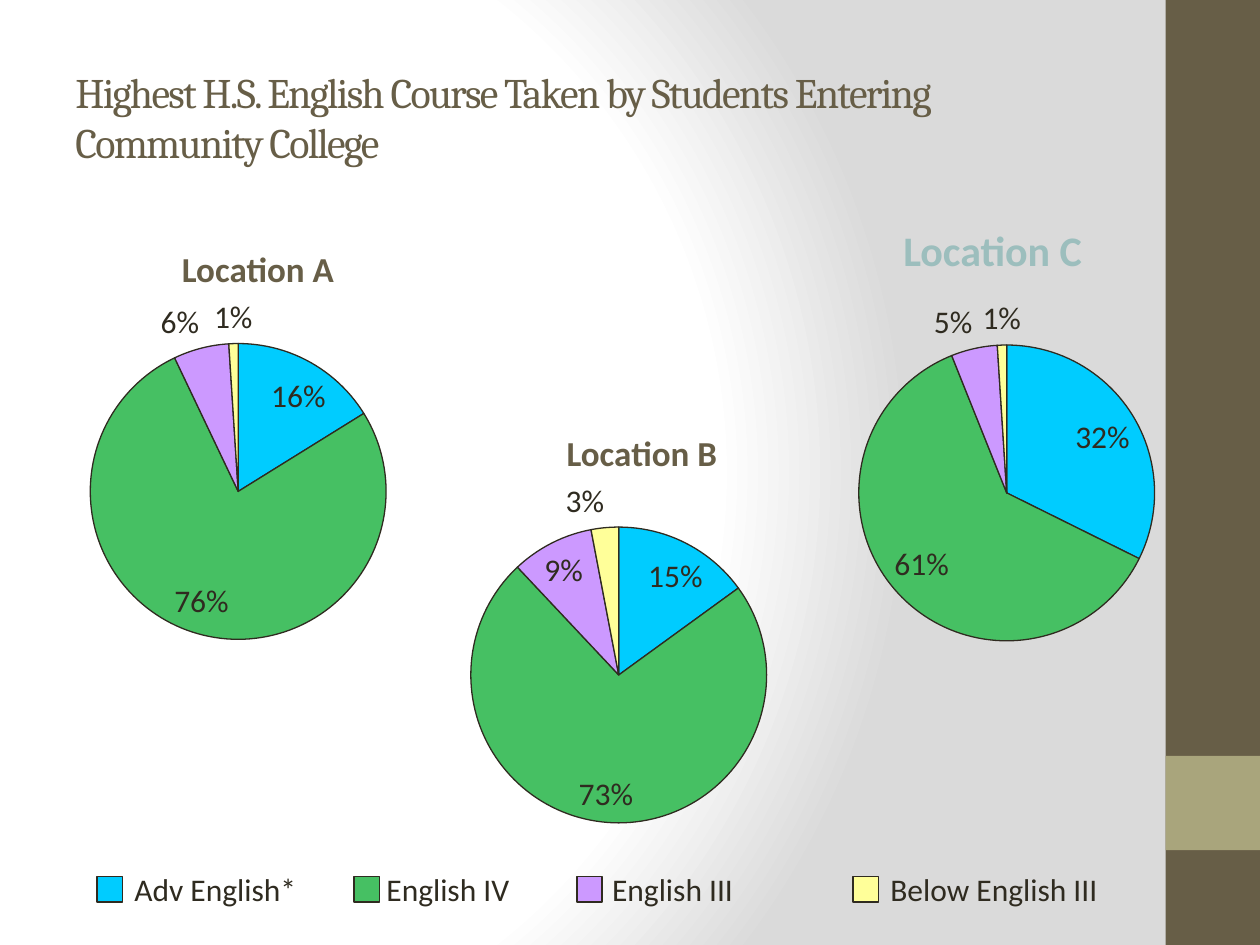
from lxml import etree
from pptx import Presentation
from pptx.chart.data import CategoryChartData
from pptx.dml.color import RGBColor
from pptx.enum.chart import XL_CHART_TYPE, XL_LABEL_POSITION
from pptx.enum.shapes import MSO_SHAPE
from pptx.enum.text import MSO_ANCHOR, PP_ALIGN
from pptx.oxml import parse_xml
from pptx.oxml.ns import nsdecls, qn
from pptx.util import Cm, Pt

INK = RGBColor(0x2F, 0x2B, 0x20)
BROWN = RGBColor(0x67, 0x5E, 0x47)
OLIVE = RGBColor(0xA9, 0xA5, 0x7C)
TEAL = RGBColor(0x9C, 0xBE, 0xBD)
BLUE = RGBColor(0x00, 0xCC, 0xFF)
GREEN = RGBColor(0x46, 0xC0, 0x63)
MAUVE = RGBColor(0xCC, 0x99, 0xFF)
CREAM = RGBColor(0xFF, 0xFF, 0x99)
HUES = [BLUE, GREEN, MAUVE, CREAM]

deck = Presentation()
deck.slide_width, deck.slide_height = Cm(25.4), Cm(19.05)
slide = deck.slides.add_slide(deck.slide_layouts[6])


def add_text(text, x, y, w, h, size, color, anchor, face="Calibri", bold=False):
    box = slide.shapes.add_textbox(Cm(x), Cm(y), Cm(w), Cm(h))
    frame = box.text_frame
    frame.word_wrap = True
    frame.vertical_anchor = anchor
    para = frame.paragraphs[0]
    para.text = text
    para.font.name, para.font.size = face, Pt(size)
    para.font.bold = bold
    para.font.color.rgb = color
    return frame


def add_rect(x, y, w, h, color, line=None):
    rect = slide.shapes.add_shape(MSO_SHAPE.RECTANGLE, Cm(x), Cm(y), Cm(w), Cm(h))
    rect.shadow.inherit = False
    rect.fill.solid()
    rect.fill.fore_color.rgb = color
    if line is None:
        rect.line.fill.background()
    else:
        rect.line.color.rgb = line
        rect.line.width = Pt(1)


# Background: radial fade from white to grey
slide.background.fill.solid()
back = slide.background.fill._xPr
back.replace(back.find(qn("a:solidFill")), parse_xml(
    f'<a:gradFill {nsdecls("a")} rotWithShape="1"><a:gsLst>'
    '<a:gs pos="0"><a:srgbClr val="FFFFFF"/></a:gs>'
    '<a:gs pos="75000"><a:srgbClr val="FFFFFF"/></a:gs>'
    '<a:gs pos="100000"><a:srgbClr val="DADADA"/></a:gs></a:gsLst>'
    '<a:path path="circle"><a:fillToRect l="20000" t="50000" r="100000" b="50000"/>'
    '</a:path></a:gradFill>'))

# Side band
add_rect(23.5, 0, 1.9, 19.05, BROWN)
add_rect(23.5, 15.24, 1.9, 1.9, OLIVE)

# Title
title = add_text("Highest H.S. English Course Taken by Students Entering Community College",
                 1.27, 0.76, 21.16, 3.18, 24, BROWN, MSO_ANCHOR.MIDDLE, "Cambria")
title.paragraphs[0].runs[0]._r.get_or_add_rPr().set("spc", "-100")

# Pies: left, top, inner plot left as a share of the width, values
pies = [
    (0, 5.68, 0.18, (16, 76, 6, 1)),
    (7.57, 9.38, 0.19, (15, 73, 9, 3)),
    (15.29, 5.71, 0.2, (32, 61, 5, 1)),
]
for x, y, inset, vals in pies:
    data = CategoryChartData()
    data.categories = ["1", "2", "3", "4"]
    data.add_series("Series 1", vals)
    chart = slide.shapes.add_chart(XL_CHART_TYPE.PIE, Cm(x), Cm(y),
                                   Cm(10.11), Cm(7.62), data).chart
    chart.has_title = chart.has_legend = False
    chart.font.name, chart.font.size = "Calibri", Pt(18)
    chart.font.color.rgb = INK
    plot = chart.plots[0]
    plot.vary_by_categories = True
    for i, hue in enumerate(HUES):
        form = plot.series[0].points[i].format
        form.fill.solid()
        form.fill.fore_color.rgb = hue
        form.line.color.rgb = INK
        form.line.width = Pt(0.75)
    plot.has_data_labels = True
    labels = plot.data_labels
    labels.show_value, labels.show_percentage = True, False
    labels.number_format, labels.number_format_is_linked = '0"%"', False
    labels.position = XL_LABEL_POSITION.BEST_FIT

    # Fixed inner plot area
    area = chart._chartSpace.find(".//" + qn("c:plotArea"))
    for old in area.findall(qn("c:layout")):
        area.remove(old)
    layout = etree.Element(qn("c:layout"))
    manual = etree.SubElement(layout, qn("c:manualLayout"))
    for tag, val in [("layoutTarget", "inner"), ("xMode", "edge"), ("yMode", "edge"),
                     ("x", inset), ("y", 0.16), ("w", 0.59), ("h", 0.79)]:
        etree.SubElement(manual, qn("c:" + tag)).set("val", str(val))
    area.insert(0, layout)

# Pie headings
for name, x, y in [("Location A", 2.5, 4.19), ("Location B", 10.24, 7.9)]:
    head = add_text(name, x, y, 5.4, 1.78, 20, BROWN, MSO_ANCHOR.BOTTOM, bold=True)
    head.paragraphs[0].alignment = PP_ALIGN.CENTER
head = add_text("Location C", 17.75, 4.14, 5.56, 1.78, 24, TEAL, MSO_ANCHOR.MIDDLE, bold=True)
head.margin_left = Cm(0.46)
head.paragraphs[0].space_before = Pt(7)

# Legend: one line of text on tab stops, with a swatch before each name
names = ["Adv English*", "English IV", "English III", "Below English III"]
key = add_text("\t".join(names), 2.46, 17.42, 20.19, 1.02, 18, INK, MSO_ANCHOR.TOP)
props = key.paragraphs[0]._p.get_or_add_pPr()
tabs = etree.Element(qn("a:tabLst"))
for stop in (5.08, 9.63, 15.24):
    etree.SubElement(tabs, qn("a:tab"), pos=str(Cm(stop)), algn="l")
props.insert(0, tabs)
for x, hue in zip((1.96, 7.14, 11.63, 17.2), HUES):
    add_rect(x, 17.67, 0.51, 0.51, hue, INK)

deck.save("out.pptx")
